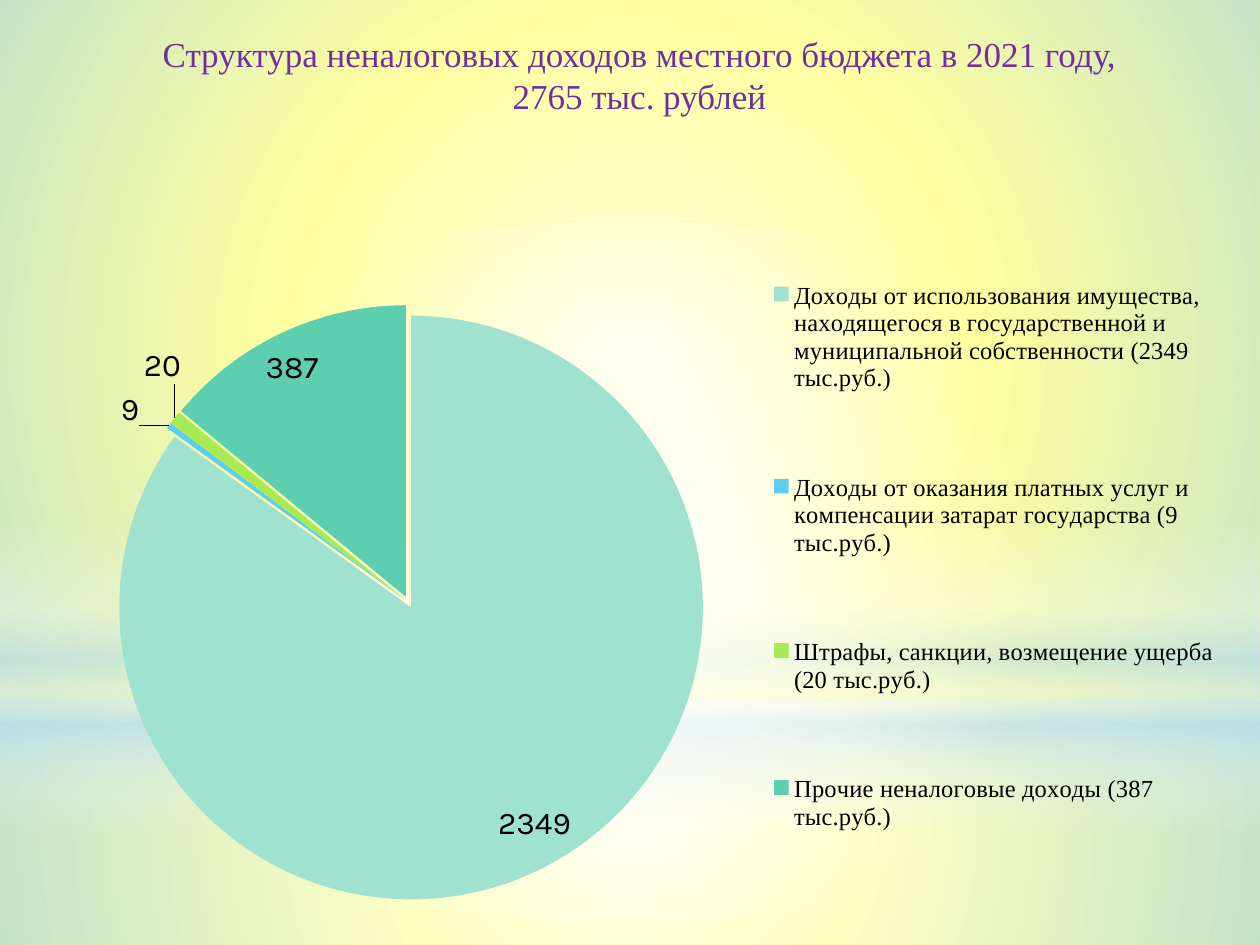
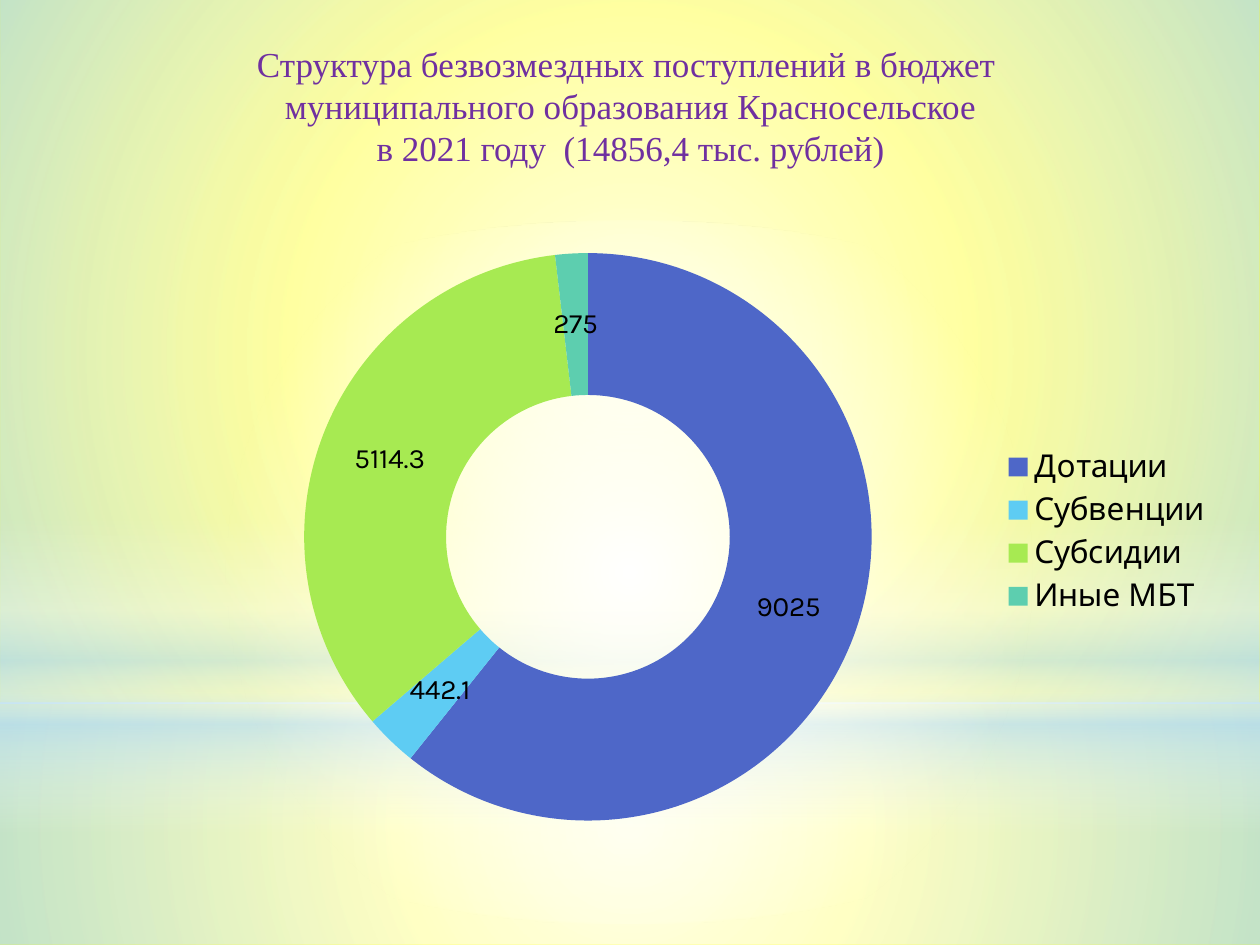
from dataclasses import dataclass

from pptx import Presentation
from pptx.chart.data import CategoryChartData
from pptx.dml.color import RGBColor
from pptx.enum.chart import XL_CHART_TYPE as ChartType
from pptx.enum.chart import XL_DATA_LABEL_POSITION as LabelPosition
from pptx.enum.chart import XL_LEGEND_POSITION as LegendPosition
from pptx.enum.shapes import MSO_SHAPE as ShapeKind
from pptx.enum.text import MSO_ANCHOR, MSO_AUTO_SIZE, PP_ALIGN
from pptx.oxml import parse_xml
from pptx.oxml.ns import nsdecls, qn
from pptx.util import Inches, Pt


@dataclass(frozen=True)
class Theme:
    background: str = "FFFF00"
    glow: str = "FFFFFF"
    sky: str = "B4DCFA"
    title: str = "7030A0"
    text: str = "000000"
    indigo: str = "4E67C8"
    pale_teal: str = "9EE2CF"
    blue: str = "5ECCF3"
    green: str = "A7EA52"
    teal: str = "5DCEAF"
    title_font: str = "Times New Roman"
    chart_font: str = "Karla"
    title_size: int = 20
    chart_size: int = 18
    ring_label_size: int = 16
    legend_size: int = 14


THEME = Theme()
RADIAL = ('<a:path path="circle"><a:fillToRect l="50000" t="50000" '
          'r="50000" b="50000"/></a:path>')
VERTICAL = '<a:lin ang="5400000" scaled="0"/>'


def rgb(color):
    return RGBColor.from_string(color)


# Shared backdrop
def set_gradient(shape, stops, direction):
    """Fill a shape with (position %, colour, opacity %) stops."""
    stop_xml = "".join(
        f'<a:gs pos="{position * 1000}"><a:srgbClr val="{color}">'
        f'<a:alpha val="{opacity * 1000}"/></a:srgbClr></a:gs>'
        for position, color, opacity in stops)
    gradient = parse_xml(
        f'<a:gradFill {nsdecls("a")} rotWithShape="1">'
        f'<a:gsLst>{stop_xml}</a:gsLst>{direction}</a:gradFill>')
    shape.fill.background()
    properties = shape.element.spPr
    properties.replace(properties.find(qn("a:noFill")), gradient)


def build_backdrop(master, slide):
    """Draw the soft bands with the slide's shapes, then move them to the master."""
    master.background.fill.solid()
    master.background.fill.fore_color.rgb = rgb(THEME.background)
    glow, sky = THEME.glow, THEME.sky
    bands = [
        (ShapeKind.RECTANGLE, 5.58, 1.92, RADIAL,
         [(0, glow, 91), (37, glow, 76), (100, sky, 79)]),
        (ShapeKind.RECTANGLE, 0, 5.58, RADIAL,
         [(0, glow, 89), (48, glow, 62), (100, sky, 79)]),
        (ShapeKind.RECTANGLE, 4.12, 2.5, VERTICAL,
         [(0, glow, 0), (29, glow, 30), (45, sky, 40),
          (55, glow, 26), (65, sky, 60), (100, glow, 0)]),
        (ShapeKind.OVAL, 1.75, 5.58, RADIAL, [(0, glow, 100), (56, glow, 0)]),
    ]
    for index, (kind, top, height, direction, stops) in enumerate(bands):
        shape = slide.shapes.add_shape(
            kind, 0, Inches(top), Inches(10), Inches(height))
        shape.shadow.inherit = False
        shape.line.fill.background()
        set_gradient(shape, stops, direction)
        shape.element.nvSpPr.cNvPr.set("id", str(100 + index))
        master.shapes.element.insert(2 + index, shape.element)


# Titles
def set_title(slide, box, paragraphs):
    """Each paragraph is a list of lines parted by line breaks."""
    title = slide.shapes.title
    title.left, title.top, title.width, title.height = map(Inches, box)
    frame = title.text_frame
    frame.word_wrap = True
    frame.auto_size = MSO_AUTO_SIZE.NONE
    frame.vertical_anchor = MSO_ANCHOR.TOP
    for index, lines in enumerate(paragraphs):
        paragraph = frame.add_paragraph() if index else frame.paragraphs[0]
        paragraph.alignment = PP_ALIGN.CENTER
        for line_number, line in enumerate(lines):
            if line_number:
                paragraph.add_line_break()
            run = paragraph.add_run()
            run.text = line
            run.font.name = THEME.title_font
            run.font.size = Pt(THEME.title_size)
            run.font.color.rgb = rgb(THEME.title)


# Charts
def manual_layout(x, y, width=None, height=None, inner=False, edge=True):
    parts = [("layoutTarget", "inner")] if inner else []
    if edge:
        parts += [("xMode", "edge"), ("yMode", "edge")]
    parts += [("x", x), ("y", y)]
    if width is not None:
        parts += [("w", width), ("h", height)]
    body = "".join(f'<c:{tag} val="{value}"/>' for tag, value in parts)
    return parse_xml(f'<c:layout {nsdecls("c")}><c:manualLayout>{body}'
                     '</c:manualLayout></c:layout>')


def add_share_chart(slide, kind, box, shares, plot_area, label_size):
    """Add a pie or ring chart from (category, value, colour) shares."""
    data = CategoryChartData()
    data.categories = [category for category, _, _ in shares]
    data.add_series("Series 1", [value for _, value, _ in shares])
    chart = slide.shapes.add_chart(kind, *map(Inches, box), data).chart
    chart.has_title = False
    chart.font.name = THEME.chart_font
    chart.font.size = Pt(THEME.chart_size)
    chart.font.color.rgb = rgb(THEME.text)
    chart.has_legend = True
    chart.legend.position = LegendPosition.RIGHT
    chart.legend.include_in_layout = False

    plot = chart.plots[0]
    plot.vary_by_categories = True
    series = plot.series[0]
    for index, (_, _, color) in enumerate(shares):
        fill = series.points[index].format.fill
        fill.solid()
        fill.fore_color.rgb = rgb(color)
    labels = series.data_labels
    labels.show_value = True
    labels.font.name = THEME.chart_font
    labels.font.size = Pt(label_size)
    labels.font.color.rgb = rgb(THEME.text)

    area = chart.element.find(".//" + qn("c:plotArea"))
    for layout in area.findall(qn("c:layout")):
        area.remove(layout)
    area.insert(0, manual_layout(*plot_area, inner=True))
    return chart


def explode(chart, percent):
    series_name = chart.element.find(".//" + qn("c:ser")).find(qn("c:tx"))
    series_name.addnext(
        parse_xml(f'<c:explosion {nsdecls("c")} val="{percent}"/>'))


def place_legend(chart, box):
    legend = chart.legend
    legend.font.name = THEME.title_font
    legend.font.size = Pt(THEME.legend_size)
    legend.font.color.rgb = rgb(THEME.text)
    element = chart.element.find(".//" + qn("c:legend"))
    for layout in element.findall(qn("c:layout")):
        element.remove(layout)
    element.find(qn("c:legendPos")).addnext(manual_layout(*box))


def shift_label(chart, index, x, y):
    """Pull one label away from its slice, leaving a leader line."""
    label = chart.plots[0].series[0].points[index].data_label
    label.position = LabelPosition.OUTSIDE_END
    for element in chart.element.iter(qn("c:dLbl")):
        if element.find(qn("c:idx")).get("val") == str(index):
            element.find(qn("c:idx")).addnext(manual_layout(x, y, edge=False))


# Slides
def build_non_tax_income(slide):
    shares = [
        ("Доходы от использования имущества, находящегося в государственной "
         "и муниципальной собственности (2349 тыс.руб.)", 2349, THEME.pale_teal),
        ("Доходы от оказания платных услуг и компенсации затарат государства "
         "(9 тыс.руб.)", 9, THEME.blue),
        ("Штрафы, санкции, возмещение ущерба (20 тыс.руб.)", 20, THEME.green),
        ("Прочие неналоговые доходы (387 тыс.руб.)", 387, THEME.teal),
    ]
    chart = add_share_chart(slide, ChartType.PIE, (0.28, 1.53, 9.45, 5.77),
                            shares, (0.016, 0.154, 0.595, 0.819),
                            THEME.chart_size)
    chart.plots[0].series[0].data_labels.position = LabelPosition.BEST_FIT
    explode(chart, 2)
    place_legend(chart, (0.61, 0.01, 0.39, 0.98))
    shift_label(chart, 1, -0.02, 0.01)
    shift_label(chart, 2, 0.01, -0.04)
    set_title(slide, (0.43, 0.21, 9.29, 0.77),
              [["Структура неналоговых доходов местного бюджета в 2021 году,",
                "2765 тыс. рублей"]])


def build_transfers(slide):
    shares = [
        ("Дотации", 9025, THEME.indigo),
        ("Субвенции", 442.1, THEME.blue),
        ("Субсидии", 5114.3, THEME.green),
        ("Иные МБТ", 275, THEME.teal),
    ]
    set_title(slide, (0.28, 0.29, 9.45, 1.45),
              [["Структура безвозмездных поступлений в бюджет "],
               ["муниципального образования Красносельское"],
               ["в 2021 году  (14856,4 тыс. рублей)"]])
    add_share_chart(slide, ChartType.DOUGHNUT, (1.06, 1.47, 8.66, 5.5),
                    shares, (0.081, 0.098, 0.671, 0.819),
                    THEME.ring_label_size)


def main():
    presentation = Presentation()
    presentation.slide_width = Inches(10)
    presentation.slide_height = Inches(7.5)
    title_only = presentation.slide_layouts[5]
    slides = [presentation.slides.add_slide(title_only) for _ in range(2)]
    build_backdrop(presentation.slide_master, slides[0])
    build_non_tax_income(slides[0])
    build_transfers(slides[1])
    presentation.save("out.pptx")


if __name__ == "__main__":
    main()
